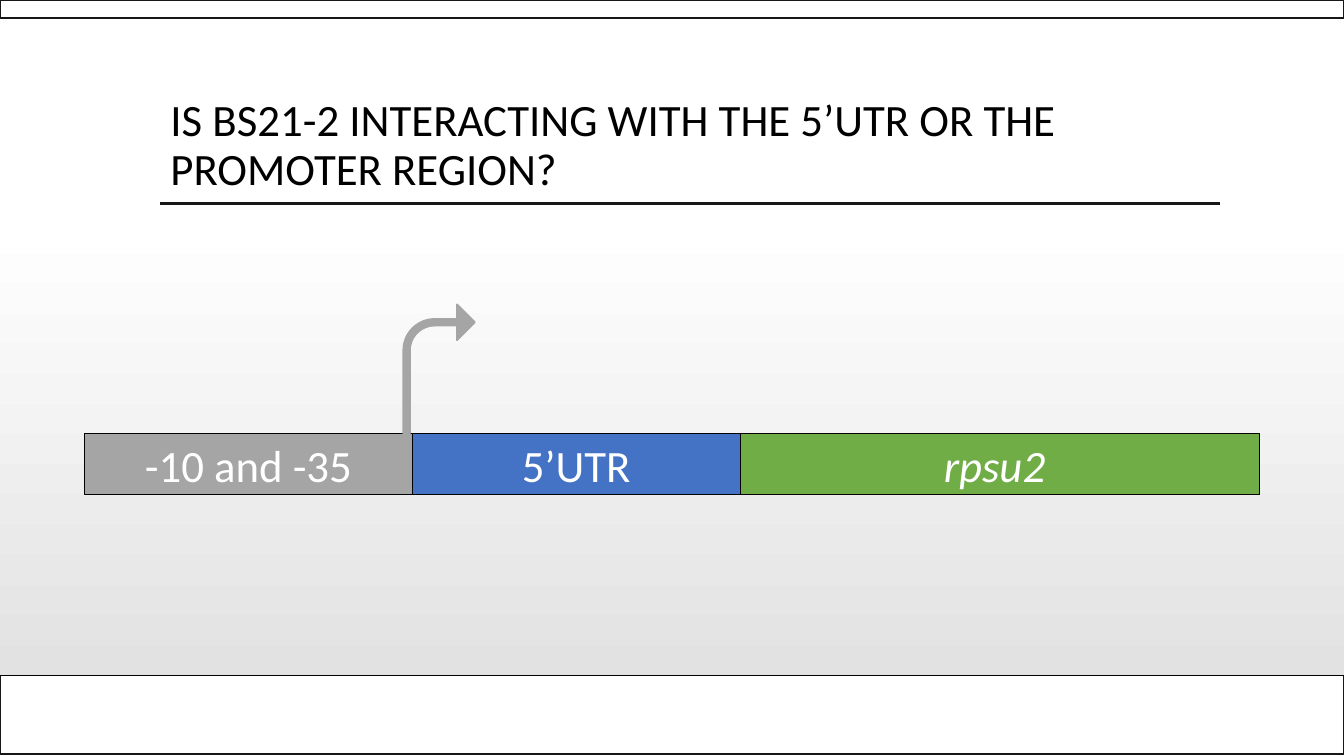
from lxml.etree import SubElement
from pptx import Presentation
from pptx.dml.color import RGBColor
from pptx.enum.shapes import MSO_CONNECTOR, MSO_SHAPE
from pptx.enum.text import MSO_ANCHOR, MSO_AUTO_SIZE, PP_ALIGN
from pptx.oxml.ns import qn
from pptx.util import Inches, Pt

QUESTION = "IS BS21-2 INTERACTING WITH THE 5’UTR OR THE PROMOTER REGION?"
REGIONS = [
    ("-10 and -35", 3.25, "A5A5A5", False),
    ("5’UTR", 3.25, "4472C4", False),
    ("rpsu2 ", 5.15, "70AD47", True),
]
BANDS = [(0, 0.18), (6.7, 0.78)]
RULES = [(0, 13.33, 6.7, "000001", 1), (1.59, 12.1, 2.02, "181717", 2.5)]
GENE_LEFT, GENE_TOP, GENE_HEIGHT = 0.84, 4.3, 0.61
ARROW_BENDS = [0.093, 0.25, 0.25, 0.438]


def color(value):
    return RGBColor.from_string(value)


def write(frame, text, ink="000000", align=PP_ALIGN.LEFT, italic=False, spacing=1.0):
    frame.word_wrap = True
    frame.auto_size = MSO_AUTO_SIZE.NONE
    frame.vertical_anchor = MSO_ANCHOR.MIDDLE
    paragraph = frame.paragraphs[0]
    paragraph.alignment = align
    paragraph.line_spacing = spacing
    run = paragraph.add_run()
    run.text = text
    run.font.name = "Calibri"
    run.font.size = Pt(32)
    run.font.italic = italic
    run.font.color.rgb = color(ink)


def add_block(slide, kind, box, fill=None, line=None, weight=1):
    block = slide.shapes.add_shape(kind, *map(Inches, box))
    block.shadow.inherit = False
    if fill:
        block.fill.solid()
        block.fill.fore_color.rgb = color(fill)
    else:
        block.fill.background()
    if line:
        block.line.color.rgb = color(line)
        block.line.width = Pt(weight)
    else:
        block.line.fill.background()
    return block


def add_rule(slide, left, right, y, ink, weight):
    rule = slide.shapes.add_connector(
        MSO_CONNECTOR.STRAIGHT, Inches(left), Inches(y), Inches(right), Inches(y))
    rule.line.color.rgb = color(ink)
    rule.line.width = Pt(weight)
    SubElement(rule._element.spPr, qn("a:effectLst"))


def add_backdrop(slide):
    backdrop = add_block(slide, MSO_SHAPE.RECTANGLE, (0, 2.21, 13.33, 4.49))
    backdrop.fill.gradient()
    backdrop.fill.gradient_angle = 270
    for stop, shade in zip(backdrop.fill.gradient_stops, ("FFFFFF", "E2E2E2")):
        stop.color.rgb = color(shade)
    for top, height in BANDS:
        add_block(slide, MSO_SHAPE.RECTANGLE, (0, top, 13.33, height), line="181717")
    for rule in RULES:
        add_rule(slide, *rule)


def add_title(slide):
    title = slide.shapes.title
    title.left, title.top, title.width, title.height = map(Inches, (1.59, 0.88, 10.5, 1.15))
    write(title.text_frame, QUESTION, spacing=0.9)


def add_gene(slide):
    left = GENE_LEFT
    for label, width, fill, italic in REGIONS:
        region = add_block(slide, MSO_SHAPE.RECTANGLE,
                           (left, GENE_TOP, width, GENE_HEIGHT), fill, "000000", 0.75)
        write(region.text_frame, label, "FFFFFF", PP_ALIGN.CENTER, italic)
        left += width
    arrow = add_block(slide, MSO_SHAPE.BENT_ARROW, (4, 3.02, 0.71, 1.28),
                      "A5A5A5", "A5A5A5", 1.25)
    for index, bend in enumerate(ARROW_BENDS):
        arrow.adjustments[index] = bend


def main():
    deck = Presentation()
    deck.slide_width, deck.slide_height = Inches(13.33), Inches(7.5)
    slide = deck.slides.add_slide(deck.slide_layouts[5])
    add_backdrop(slide)
    add_title(slide)
    add_gene(slide)
    deck.save("out.pptx")


if __name__ == "__main__":
    main()
